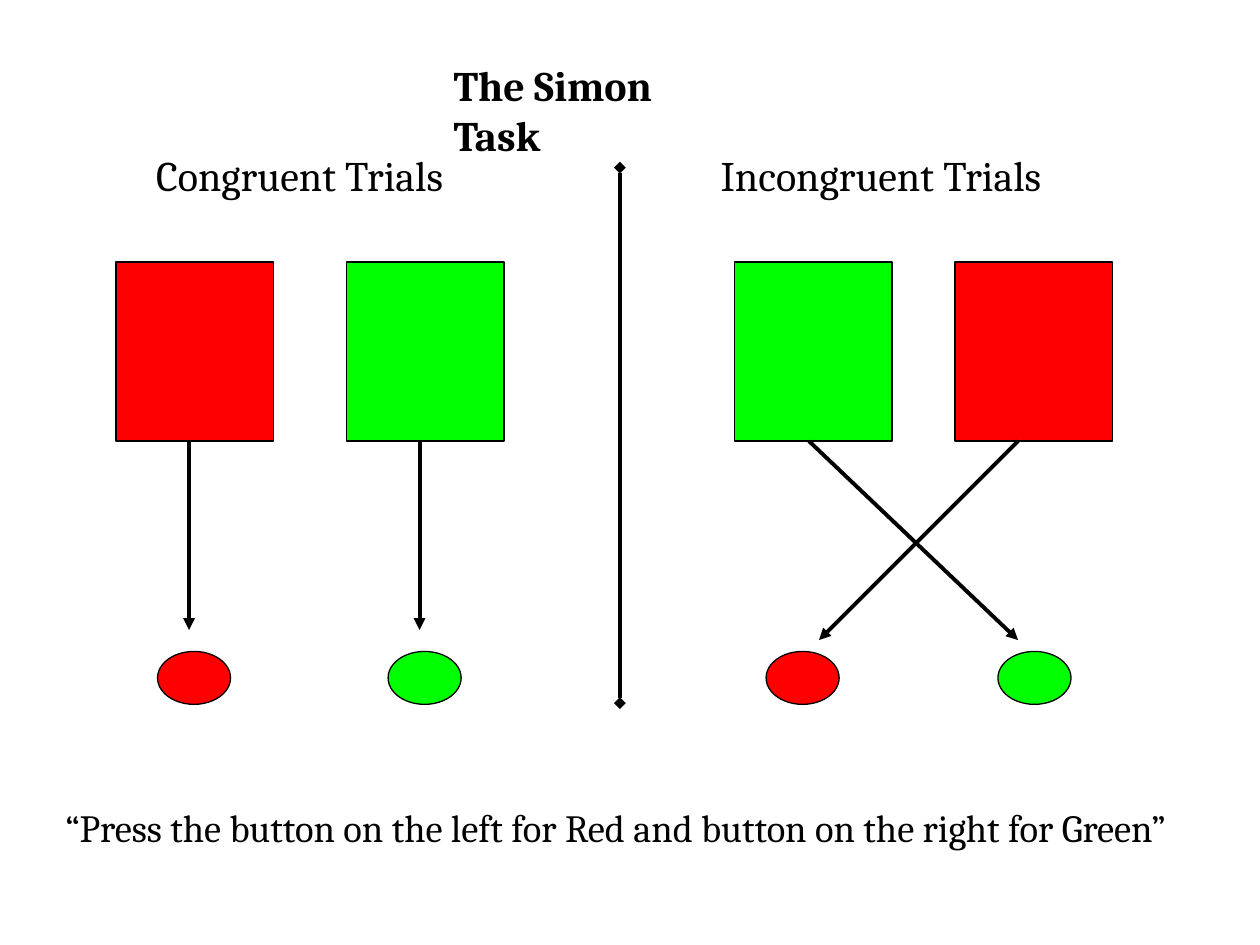
from typing import NamedTuple

from lxml import etree
from pptx import Presentation
from pptx.dml.color import RGBColor
from pptx.enum.shapes import MSO_CONNECTOR, MSO_SHAPE
from pptx.enum.text import MSO_ANCHOR, MSO_AUTO_SIZE, PP_ALIGN
from pptx.oxml.ns import qn
from pptx.util import Inches, Pt

RECTANGLE, OVAL = MSO_SHAPE.RECTANGLE, MSO_SHAPE.OVAL
STRAIGHT = MSO_CONNECTOR.STRAIGHT
TOP, LEFT, NO_AUTOFIT = MSO_ANCHOR.TOP, PP_ALIGN.LEFT, MSO_AUTO_SIZE.NONE

COLORS = {"red": "FF0000", "green": "00FF00", "black": "000000"}
FONT = "Cambria"
STIMULUS_TOP, STIMULUS_WIDTH, STIMULUS_HEIGHT = 2.08, 1.25, 1.42
STIMULUS_BOTTOM = STIMULUS_TOP + STIMULUS_HEIGHT
BUTTON_TOP, BUTTON_WIDTH, BUTTON_HEIGHT = 5.17, 0.58, 0.42
HEADING_TOP, HEADING_HEIGHT = 1.14, 0.51


class Response(NamedTuple):
    color: str
    stimulus_left: float
    button_left: float
    arrow_start: float
    arrow_end: float


class Condition(NamedTuple):
    heading: str
    heading_left: float
    heading_width: float
    arrow_bottom: float
    responses: tuple[Response, ...]


CONDITIONS = (
    Condition("Congruent Trials", 1.14, 2.48, 5, (
        Response("red", 0.92, 1.25, 1.5, 1.5),
        Response("green", 2.75, 3.08, 3.33, 3.33),
    )),
    Condition("Incongruent Trials", 5.62, 2.75, 5.08, (
        Response("green", 5.83, 7.92, 6.42, 8.08),
        Response("red", 7.58, 6.08, 8.08, 6.5),
    )),
)


def rgb(color: str) -> RGBColor:
    return RGBColor.from_string(COLORS[color])


def write(box, text: str, size: int, wrap: bool = False, bold: bool = False) -> None:
    frame = box.text_frame
    frame.text = text
    frame.word_wrap = wrap
    frame.auto_size = NO_AUTOFIT
    frame.vertical_anchor = TOP
    paragraph = frame.paragraphs[0]
    paragraph.alignment = LEFT
    paragraph.line_spacing = 1.0
    paragraph.space_before = Pt(0)
    font = paragraph.runs[0].font
    font.name, font.size, font.bold = FONT, Pt(size), bold
    font.color.rgb = rgb("black")


def add_label(slide, text: str, left: float, top: float, width: float,
              height: float, size: int) -> None:
    label = slide.shapes.add_textbox(
        Inches(left), Inches(top), Inches(width), Inches(height))
    write(label, text, size)


def add_figure(slide, kind: MSO_SHAPE, color: str, left: float, top: float,
               width: float, height: float) -> None:
    figure = slide.shapes.add_shape(
        kind, Inches(left), Inches(top), Inches(width), Inches(height))
    figure.shadow.inherit = False
    figure.fill.solid()
    figure.fill.fore_color.rgb = rgb(color)
    figure.line.color.rgb = rgb("black")
    figure.line.width = Pt(0.75)


def add_line(slide, start: tuple[float, float], end: tuple[float, float],
             **ends: str) -> None:
    line = slide.shapes.add_connector(
        STRAIGHT, *(Inches(value) for value in (*start, *end)))
    line.line.color.rgb = rgb("black")
    line.line.width = Pt(2.25)
    properties = line.line._get_or_add_ln()
    for tag, kind in ends.items():
        etree.SubElement(properties, qn(f"a:{tag}"), type=kind)
    etree.SubElement(line._element.spPr, qn("a:effectLst"))


def add_condition(slide, condition: Condition) -> None:
    add_label(slide, condition.heading, condition.heading_left, HEADING_TOP,
              condition.heading_width, HEADING_HEIGHT, 24)
    for response in condition.responses:
        add_figure(slide, RECTANGLE, response.color, response.stimulus_left,
                   STIMULUS_TOP, STIMULUS_WIDTH, STIMULUS_HEIGHT)
        add_figure(slide, OVAL, response.color, response.button_left,
                   BUTTON_TOP, BUTTON_WIDTH, BUTTON_HEIGHT)
        add_line(slide, (response.arrow_start, STIMULUS_BOTTOM),
                 (response.arrow_end, condition.arrow_bottom), tailEnd="triangle")


def main() -> None:
    presentation = Presentation()
    presentation.slide_width, presentation.slide_height = Inches(10), Inches(7.5)
    slide = presentation.slides.add_slide(presentation.slide_layouts[5])

    title = slide.shapes.title
    title.left, title.top = Inches(3.5), Inches(0.42)
    title.width, title.height = Inches(2.5), Inches(0.51)
    write(title, "The Simon Task", 24, wrap=True, bold=True)

    for condition in CONDITIONS:
        add_condition(slide, condition)
    add_line(slide, (4.92, 1.33), (4.92, 5.58), headEnd="diamond", tailEnd="diamond")
    add_label(slide, "“Press the button on the left for Red and button on the right for Green”",
              0.42, 6.33, 8.94, 0.47, 22)

    presentation.save("out.pptx")


if __name__ == "__main__":
    main()
